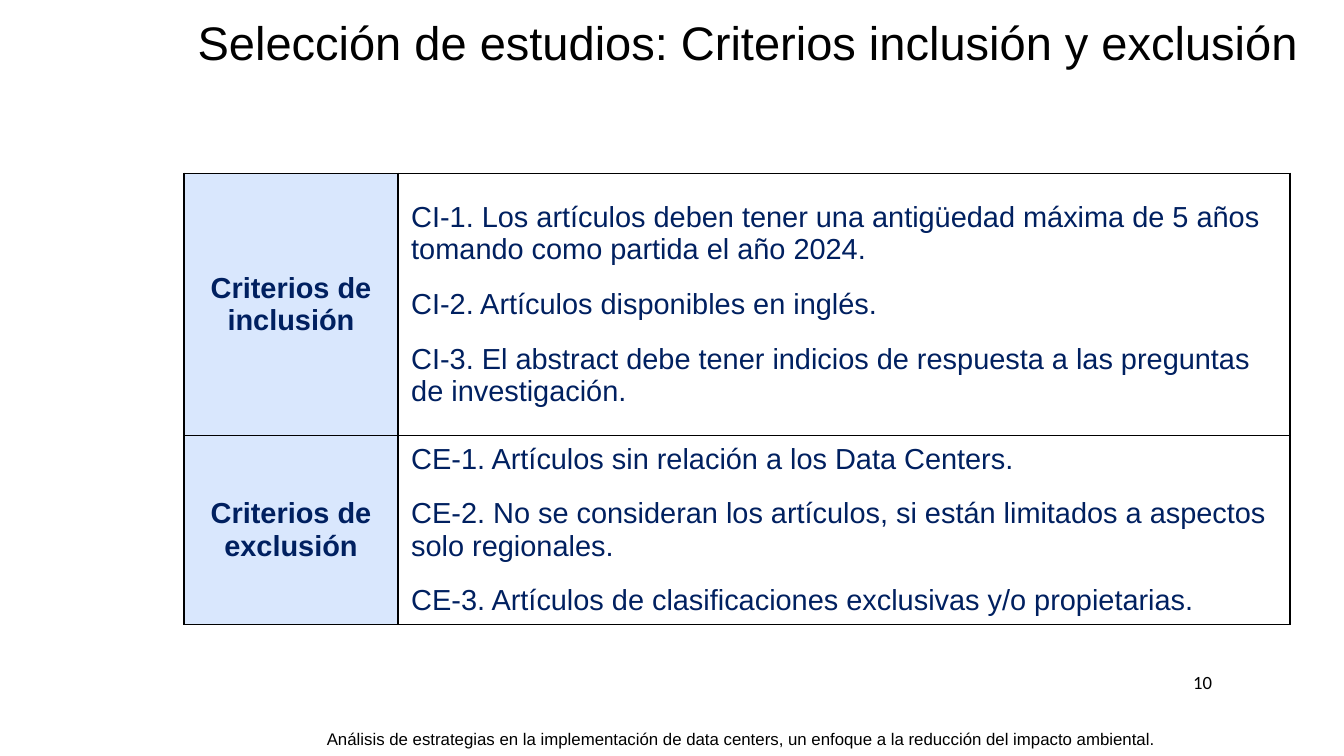
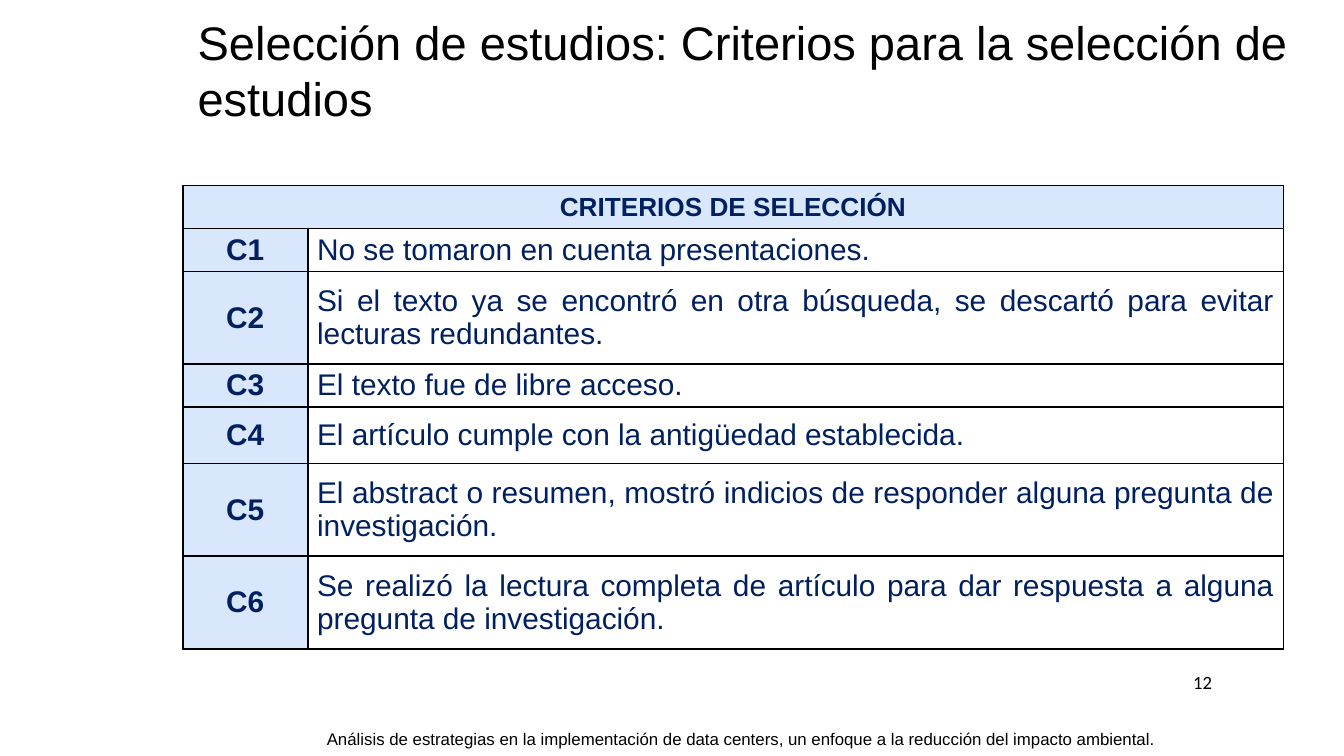
from pptx import Presentation
from pptx.dml.color import RGBColor
from pptx.enum.text import MSO_ANCHOR, MSO_AUTO_SIZE, PP_ALIGN
from pptx.oxml.ns import qn
from pptx.util import Inches, Pt
from lxml.etree import SubElement

BLACK = "000000"
NAVY = "002060"
PALE_BLUE = "D9E7FD"
FOOTER = ("Análisis de estrategias en la implementación de data centers, "
          "un enfoque a la reducción del impacto ambiental.")

CRITERIA = [
    ("Criterios de inclusión", [
        "CI-1. Los artículos deben tener una antigüedad máxima de 5 años "
        "tomando como partida el año 2024.",
        "CI-2. Artículos disponibles en inglés.",
        "CI-3. El abstract debe tener indicios de respuesta a las preguntas "
        "de investigación.",
    ]),
    ("Criterios de exclusión", [
        "CE-1. Artículos sin relación a los Data Centers.",
        "CE-2. No se consideran los artículos, si están limitados a aspectos "
        "solo regionales.",
        "CE-3. Artículos de clasificaciones exclusivas y/o propietarias.",
    ]),
]

SELECTION = [
    (0.32, "No se tomaron en cuenta presentaciones."),
    (0.69, "Si el texto ya se encontró en otra búsqueda, se descartó para "
           "evitar lecturas redundantes."),
    (0.32, "El texto fue de libre acceso."),
    (0.42, "El artículo cumple con la antigüedad establecida."),
    (0.69, "El abstract o resumen, mostró indicios de responder alguna "
           "pregunta de investigación."),
    (0.69, "Se realizó la lectura completa de artículo para dar respuesta a "
           "alguna pregunta de investigación."),
]


def color(code):
    return RGBColor.from_string(code)


def set_margins(holder, across, down):
    holder.margin_left = holder.margin_right = Inches(across)
    holder.margin_top = holder.margin_bottom = Inches(down)


def write(frame, lines, size, code=BLACK, font="Arial", bold=False,
          align=PP_ALIGN.LEFT, after=0):
    """Write each line as one paragraph of the text frame."""
    frame.word_wrap = True
    for index, line in enumerate(lines):
        para = frame.add_paragraph() if index else frame.paragraphs[0]
        para.alignment = align
        para.space_after = Pt(after)
        span = para.add_run()
        span.text = line
        span.font.size = Pt(size)
        span.font.name = font
        span.font.bold = bold
        span.font.color.rgb = color(code)


def add_label(page, place, text, size, **style):
    box = page.shapes.add_textbox(*map(Inches, place))
    set_margins(box.text_frame, 0.1, 0.05)
    write(box.text_frame, [text], size, **style)


def add_page(deck, title, number):
    """Add a page with the shared title, footer and page number."""
    page = deck.slides.add_slide(deck.slide_layouts[5])
    heading = page.shapes.title
    heading.left, heading.top, heading.width, heading.height = map(
        Inches, (1.37, 0, 8.44, 0.63))
    frame = heading.text_frame
    frame.auto_size = MSO_AUTO_SIZE.NONE
    frame.vertical_anchor = MSO_ANCHOR.TOP
    set_margins(frame, 0.1, 0.1)
    write(frame, [title], 25.2)
    add_label(page, (1.93, 5.37, 7.16, 0.25), FOOTER, 9,
              align=PP_ALIGN.CENTER)
    add_label(page, (8.78, 4.94, 0.5, 0.27), str(number), 10, font="Calibri")
    return page


def add_grid(page, left, top, columns, rows, margins):
    """Add a plain table with thin black borders on every cell."""
    table = page.shapes.add_table(
        len(rows), len(columns), Inches(left), Inches(top),
        Inches(sum(columns)), Inches(sum(rows))).table
    table.first_row = table.horz_banding = False
    for column, width in zip(table.columns, columns):
        column.width = Inches(width)
    for row, height in zip(table.rows, rows):
        row.height = Inches(height)
    for cell in table.iter_cells():
        cell.vertical_anchor = MSO_ANCHOR.MIDDLE
        set_margins(cell, *margins)
        properties = cell._tc.get_or_add_tcPr()
        for side in ("a:lnL", "a:lnR", "a:lnT", "a:lnB"):
            line = SubElement(properties, qn(side), w=str(Pt(1)))
            fill = SubElement(line, qn("a:solidFill"))
            SubElement(fill, qn("a:srgbClr"), val=BLACK)
        cell.fill.background()
    return table


def fill_heading(cell, text, size):
    cell.fill.solid()
    cell.fill.fore_color.rgb = color(PALE_BLUE)
    write(cell.text_frame, [text], size, NAVY, bold=True,
          align=PP_ALIGN.CENTER)


def add_criteria_table(page, left, top):
    table = add_grid(page, left, top, (1.59, 6.64), (1.95, 1.3), (0.1, 0.05))
    for row, (name, items) in enumerate(CRITERIA):
        fill_heading(table.cell(row, 0), name, 15.5)
        write(table.cell(row, 1).text_frame, items, 15.5, NAVY, after=12)
    set_margins(table.cell(1, 1), 0.1, 0.02)


def add_selection_table(page, left, top):
    heights = [0.32] + [height for height, _ in SELECTION]
    table = add_grid(page, left, top, (0.93, 7.26), heights, (0.07, 0))
    table.cell(0, 0).merge(table.cell(0, 1))
    fill_heading(table.cell(0, 0), "CRITERIOS DE SELECCIÓN", 14)
    for row, (_, text) in enumerate(SELECTION, start=1):
        fill_heading(table.cell(row, 0), f"C{row}", 16)
        write(table.cell(row, 1).text_frame, [text], 16, NAVY,
              align=PP_ALIGN.JUSTIFY)


def main():
    deck = Presentation()
    deck.slide_width = Inches(10)
    deck.slide_height = deck.slide_width * 9 // 16
    page = add_page(
        deck, "Selección de estudios: Criterios inclusión y exclusión", 10)
    add_criteria_table(page, 1.37, 1.29)
    page = add_page(
        deck, "Selección de estudios: Criterios para la selección de estudios",
        12)
    add_selection_table(page, 1.36, 1.38)
    deck.save("out.pptx")


if __name__ == "__main__":
    main()
